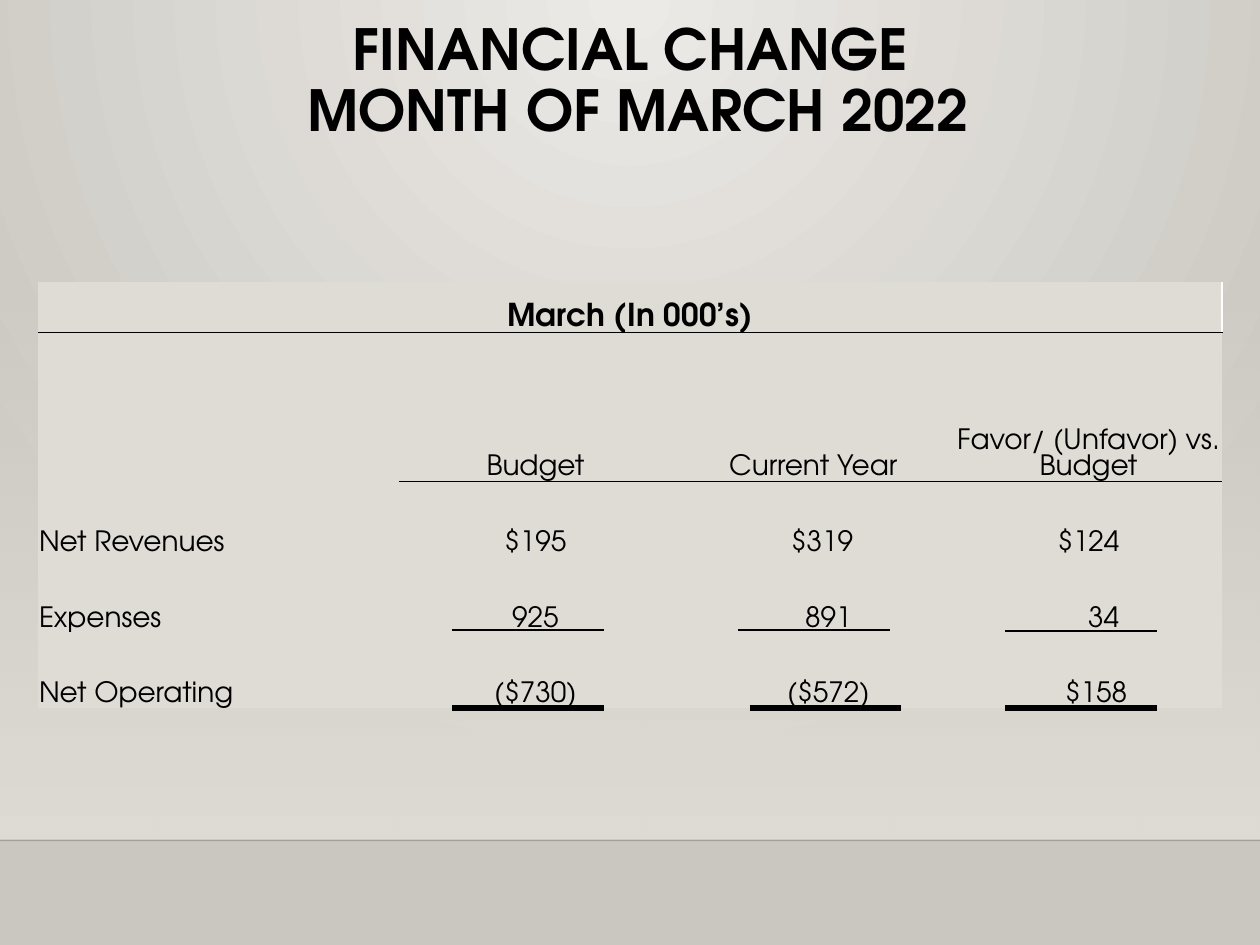
import pptx
import pptx.util
import pptx.dml.color
import pptx.enum.shapes
import pptx.enum.text
import pptx.oxml
import pptx.oxml.ns
from pptx.util import Inches

FONT = "TeX Gyre Adventor"
BLACK = "000000"
SAND = "DFDBD5"
NAMESPACE = pptx.oxml.ns.nsdecls("a")
qn = pptx.oxml.ns.qn


def color(value):
    return pptx.dml.color.RGBColor.from_string(value)


def set_borders(cell, colors):
    """Give every side of a cell a 1 pt border, or none where no colour is named."""
    for index, side in enumerate(("lnL", "lnR", "lnT", "lnB")):
        paint = "<a:noFill/>"
        if side in colors:
            paint = f'<a:solidFill><a:srgbClr val="{colors[side]}"/></a:solidFill>'
        cell._tc.get_or_add_tcPr().insert(index, pptx.oxml.parse_xml(
            f'<a:{side} {NAMESPACE} w="12700">{paint}</a:{side}>'))


deck = pptx.Presentation()
deck.slide_width, deck.slide_height = Inches(10), Inches(7.5)
page = deck.slides.add_slide(deck.slide_layouts[6])

# Background: circular glow from the top centre
backdrop = page.background.fill
backdrop.gradient()
for stop, value in zip(backdrop.gradient_stops, ("ECEAE7", "CAC7C1")):
    stop.color.rgb = color(value)
gradient = page.background._cSld.find(".//" + qn("a:gradFill"))
gradient.replace(gradient.find(qn("a:lin")), pptx.oxml.parse_xml(
    f'<a:path {NAMESPACE} path="circle">'
    '<a:fillToRect l="43000" t="0" r="43000" b="100000"/></a:path>'))

# Panel fading in from clear at the top to sand at the bottom
panel = page.shapes.add_shape(pptx.enum.shapes.MSO_SHAPE.RECTANGLE,
                              0, Inches(2.2), Inches(10), Inches(4.46))
panel.shadow.inherit = False
panel.line.fill.background()
panel.fill.gradient()
for stop in panel.fill.gradient_stops:
    stop.color.rgb = color(SAND)
gradient = panel._element.spPr.find(qn("a:gradFill"))
gradient.find(qn("a:lin")).set("ang", "5400000")
gradient.find(".//" + qn("a:srgbClr")).append(
    pptx.oxml.parse_xml(f'<a:alpha {NAMESPACE} val="0"/>'))

# Title
box = page.shapes.add_textbox(Inches(0.9), Inches(0.12), Inches(8.2), Inches(1.13))
box.text_frame.word_wrap = True
box.text_frame.vertical_anchor = pptx.enum.text.MSO_ANCHOR.TOP
box.text_frame.text = "FINANCIAL CHANGE\v MONTH OF MARCH 2022"
para = box.text_frame.paragraphs[0]
para.alignment = pptx.enum.text.PP_ALIGN.CENTER
para.line_spacing = 0.9
for span in para.runs:
    span.font.name = FONT
    span.font.size = pptx.util.Pt(32.4)
    span.font.bold = True
    span.font.color.rgb = color(BLACK)

# Table: plain style, sand cells
rows = [
    ["March (In 000’s)", "", "", ""],
    ["", "Budget", "Current Year", "Favor/ (Unfavor) vs. Budget"],
    ["", "", "", ""],
    ["", "", "", ""],
    ["Net Revenues", "$195", "$319", "$124"],
    ["Expenses", "925", "891", "34"],
    ["Net Operating", "($730)", "($572)", "$158"],
]
indents = {(4, 2): 0.14, (5, 2): 0.24, (5, 3): 0.24, (6, 2): 0.24, (6, 3): 0.12}
frame = page.shapes.add_table(7, 4, Inches(0.3), Inches(2.24), Inches(9.4), Inches(3.38))
table = frame.table
table.first_row = table.horz_banding = False
table._tbl.tblPr.find(qn("a:tableStyleId")).text = "{2D5ABB26-0587-4C30-8999-92F81FD0307C}"
for column, width in zip(table.columns, (2.87, 2.16, 2.25, 2.12)):
    column.width = Inches(width)
for row, height in zip(table.rows, (0.4, 0.5, 0.34, 0.34, 0.6, 0.6, 0.6)):
    row.height = Inches(height)

for r, texts in enumerate(rows):
    for c, text in enumerate(texts):
        cell = table.cell(r, c)
        cell.fill.solid()
        cell.fill.fore_color.rgb = color(SAND)
        cell.margin_left = Inches(0.01 + indents.get((r, c), 0))
        cell.margin_right = cell.margin_top = Inches(0.01)
        cell.margin_bottom = 0
        cell.vertical_anchor = pptx.enum.text.MSO_ANCHOR.BOTTOM
        # Rules under the title row and under the column headings
        borders = {}
        if r == 0 and c in (0, 3):
            borders["lnR"] = "FFFFFF"
        if r == 1 or (r == 4 and c > 0):
            borders["lnT"] = BLACK
        if r == 0 or (r in (1, 3) and c > 0):
            borders["lnB"] = BLACK
        set_borders(cell, borders)
        if not text:
            continue
        cell.text_frame.text = text
        para = cell.text_frame.paragraphs[0]
        if r == 0 or c > 0:
            para.alignment = pptx.enum.text.PP_ALIGN.CENTER
        font = para.runs[0].font
        font.name = FONT
        font.size = pptx.util.Pt(18 if r == 0 else 16)
        font.bold = r == 0
        font.color.rgb = color(BLACK)

table.cell(0, 0).merge(table.cell(0, 3))
for c in range(1, 4):
    table.cell(1, c).merge(table.cell(3, c))

# Footer rule, then subtotal and total rules: left, top, length, weight, colour
rules = [(0, 6.67, 10, 1, "000001")]
for subtotal_left, subtotal_top, total_left in ((3.59, 5, 3.59), (5.86, 5, 5.95), (7.98, 5.01, 7.98)):
    rules.append((total_left, 5.62, 1.2, 3, BLACK))
    rules.append((subtotal_left, subtotal_top, 1.2, 1.25, BLACK))
for left, top, length, weight, value in rules:
    rule = page.shapes.add_connector(pptx.enum.shapes.MSO_CONNECTOR.STRAIGHT, Inches(left),
                                     Inches(top), Inches(left + length), Inches(top))
    rule.line.width = pptx.util.Pt(weight)
    rule.line.color.rgb = color(value)
    rule._element.spPr.append(pptx.oxml.parse_xml(f"<a:effectLst {NAMESPACE}/>"))
    if top == 6.67:
        rule._element.spPr.find(".//" + qn("a:srgbClr")).append(
            pptx.oxml.parse_xml(f'<a:alpha {NAMESPACE} val="20000"/>'))

deck.save("out.pptx")
